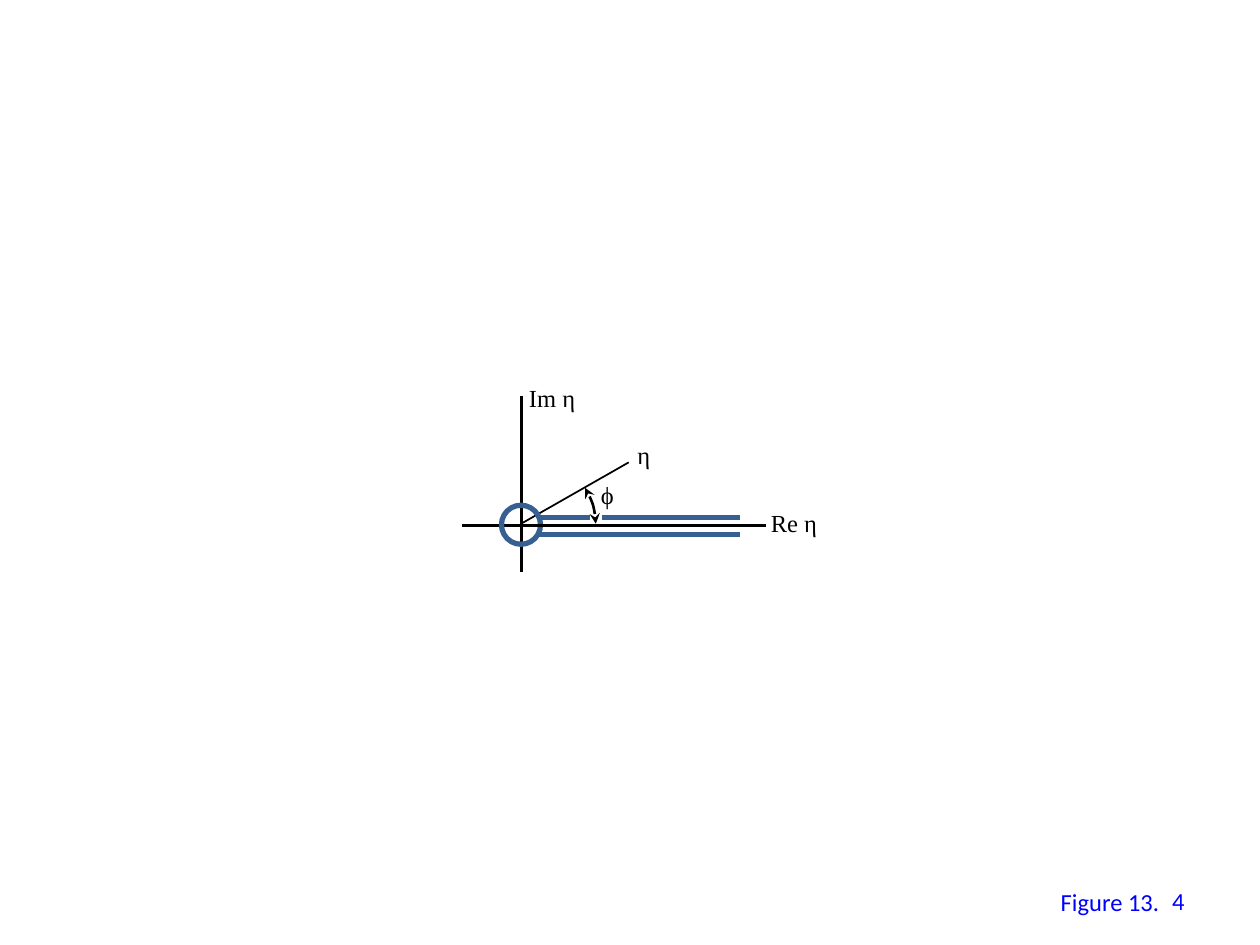
from lxml import etree
from pptx import Presentation
from pptx import util as u
from pptx.dml.color import RGBColor
from pptx.enum import shapes, text
from pptx.oxml.ns import qn

COLORS = {"ink": "000000", "contour": "376092", "gap": "FFFFFF", "caption": "0000FF"}


class Figure:
    """Holds the fonts, text size and current slide, and draws each kind of element."""

    math_font, caption_font, size = "Times New Roman", "Calibri", 14

    def __init__(self, slide):
        self.slide = slide

    def stroke(self, shape, color, width):
        shape.line.color.rgb = RGBColor.from_string(COLORS[color])
        shape.line.width = u.Pt(width)

    def line(self, start, end, color="ink", width=1.5, parent=None):
        owner = parent or self.slide
        ends = [u.Inches(v) for v in (*start, *end)]
        connector = owner.shapes.add_connector(shapes.MSO_CONNECTOR.STRAIGHT, *ends)
        self.stroke(connector, color, width)
        etree.SubElement(connector._element.spPr, qn("a:effectLst"))

    def outline(self, kind, left, top, side, color, width, parent=None):
        owner = parent or self.slide
        box = [u.Inches(v) for v in (left, top, side, side)]
        shape = owner.shapes.add_shape(kind, *box)
        shape.shadow.inherit = False
        shape.fill.background()
        self.stroke(shape, color, width)
        return shape

    def angle_arc(self, left, top, side, start, end):
        """Double-headed arc between two angles, in degrees clockwise."""
        arc = self.outline(shapes.MSO_SHAPE.ARC, left, top, side, "ink", 1.5)
        for i, degrees in enumerate((start, end)):
            arc.adjustments[i] = degrees * 0.6  # 60000 units a degree, over 100000
        for tag in ("a:headEnd", "a:tailEnd"):
            etree.SubElement(arc.line._get_or_add_ln(), qn(tag), type="stealth")

    def label(self, words, left, top, width, height=0.34, font=math_font, color="ink"):
        box = [u.Inches(v) for v in (left, top, width, height)]
        frame = self.slide.shapes.add_textbox(*box).text_frame
        frame.word_wrap = False
        run = frame.paragraphs[0].add_run()
        run.text = words
        run.font.name = font
        run.font.size = u.Pt(self.size)
        run.font.color.rgb = RGBColor.from_string(COLORS[color])
        return frame

    def caption(self, words, left, top, width, height):
        return self.label(words, left, top, width, height, self.caption_font, "caption")


def main():
    prs = Presentation()
    prs.slide_width, prs.slide_height = u.Inches(10), u.Inches(7.5)
    figure = Figure(prs.slides.add_slide(prs.slide_layouts[6]))

    figure.caption("Figure 13.", 8.32, 6.99, 0.99, 0.34)

    # Axes and the ray to η
    figure.line((4.14, 3.14), (4.14, 4.54))
    figure.line((3.67, 4.17), (6.08, 4.17))
    figure.line((4.13, 4.16), (4.99, 3.67), width=1)

    # Contour: circle round the origin, then both sides of the real axis
    contour = figure.slide.shapes.add_group_shape()
    figure.outline(shapes.MSO_SHAPE.OVAL, 3.98, 4.01, 0.31, "contour", 3, contour)
    for y in (4.11, 4.24):
        figure.line((4.28, y), (5.87, y), "contour", 3, contour)

    for words, left, top, width in (
        ("η", 4.96, 3.44, 0.32),
        ("ϕ", 4.67, 3.76, 0.31),
        ("Im η", 4.1, 2.99, 0.57),
        ("Re η", 6.02, 3.98, 0.57),
    ):
        figure.label(words, left, top, width)

    # Axis restored over the circle, and a gap in the contour for the arc
    figure.line((4.26, 4.17), (4.32, 4.17))
    figure.line((4.68, 4.11), (4.78, 4.11), "gap", 4.5)
    figure.angle_arc(3.53, 3.58, 1.2, 329.18, 357.79)

    number = figure.caption("4", 7.17, 6.95, 2.33, 0.4)
    number.word_wrap = True
    number.vertical_anchor = text.MSO_ANCHOR.MIDDLE
    number.paragraphs[0].alignment = text.PP_ALIGN.RIGHT

    prs.save("out.pptx")


if __name__ == "__main__":
    main()
